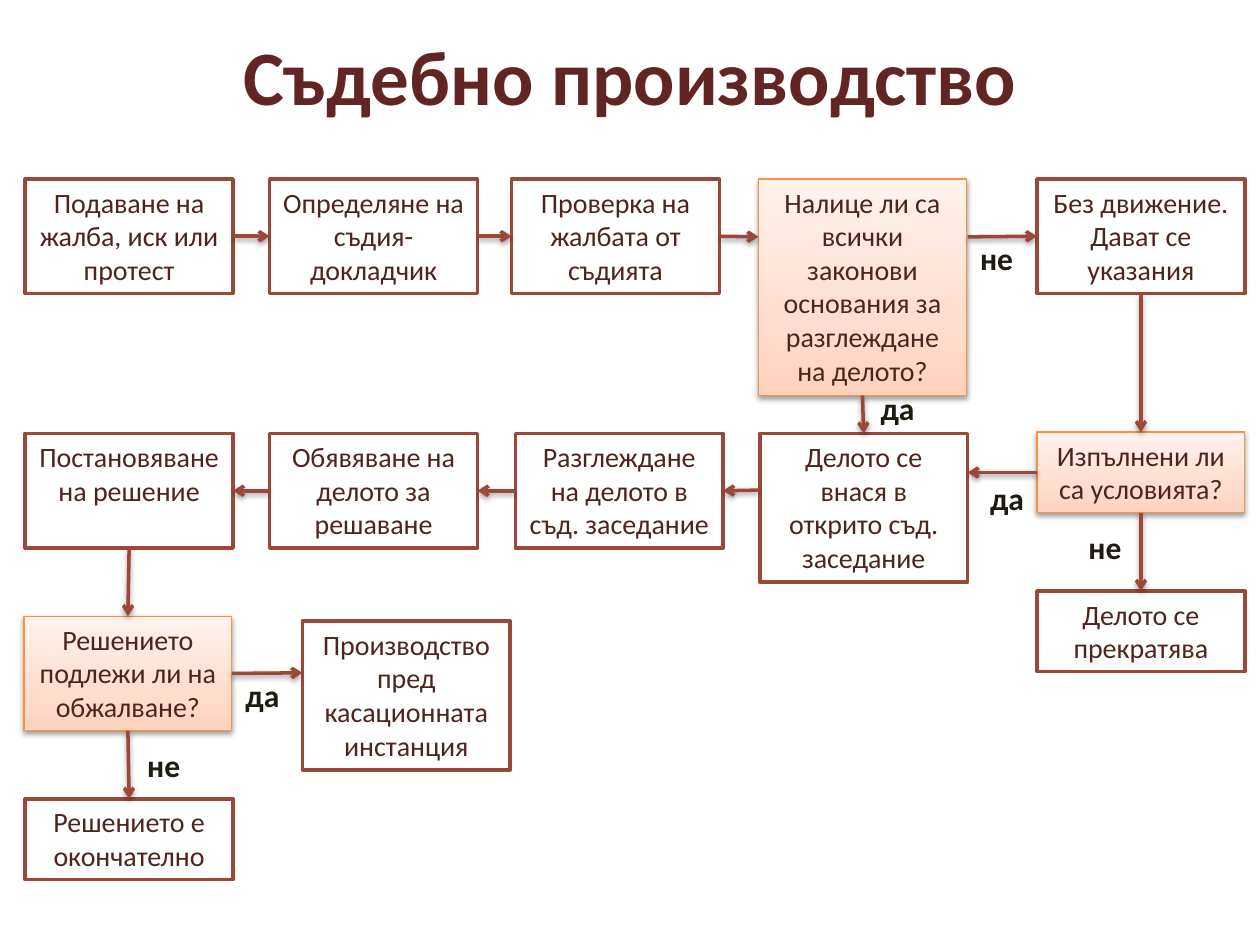
from copy import deepcopy
from pptx import Presentation
from pptx.dml.color import RGBColor
from pptx.enum.shapes import MSO_CONNECTOR, MSO_SHAPE
from pptx.enum.text import MSO_ANCHOR, MSO_AUTO_SIZE, PP_ALIGN
from pptx.oxml import parse_xml
from pptx.oxml.ns import nsdecls, qn
from pptx.util import Inches, Pt

SHADOW = (
    f'<a:effectLst {nsdecls("a")}>'
    '<a:outerShdw blurRad="40000" dist="20000" dir="5400000" rotWithShape="0">'
    '<a:srgbClr val="000000"><a:alpha val="38000"/></a:srgbClr>'
    '</a:outerShdw></a:effectLst>'
)
TOP, LEFT, BOTTOM, RIGHT = range(4)


def color(value):
    return RGBColor.from_string(value)


def write(paragraph, text, size, value, bold):
    run = paragraph.add_run()
    run.text = text
    run.font.name = "Calibri"
    run.font.size = Pt(size)
    run.font.bold = bold
    run.font.color.rgb = color(value)


prs = Presentation()
prs.slide_width, prs.slide_height = Inches(10), Inches(7.5)
slide = prs.slides.add_slide(prs.slide_layouts[5])

title = slide.shapes.title
title.left, title.top = Inches(0.5), Inches(-0.03)
title.width, title.height = Inches(9), Inches(1.25)
title.text_frame.vertical_anchor = MSO_ANCHOR.MIDDLE
heading = title.text_frame.paragraphs[0]
heading.alignment = PP_ALIGN.CENTER
write(heading, "Съдебно производство", 44, "632523", True)

row_1, row_2 = 1.42, 3.44
two_lines, three_lines, four_lines, six_lines = 0.64, 0.91, 1.18, 1.72
steps = [
    ("filing", 0.2, row_1, three_lines, "Подаване на жалба, иск или протест"),
    ("judge", 2.14, row_1, three_lines, "Определяне на съдия-докладчик"),
    ("check", 4.06, row_1, three_lines, "Проверка на жалбата от съдията"),
    ("grounds", 6.02, row_1, six_lines,
     "Налице ли са всички законови основания за разглеждане на делото?"),
    ("pending", 8.23, row_1, three_lines, "Без движение. Дават се указания"),
    ("conditions", 8.23, 3.43, two_lines, "Изпълнени ли са условията?"),
    ("terminated", 8.23, 4.69, two_lines, "Делото се прекратява"),
    ("open_session", 6.03, row_2, four_lines, "Делото се внася в открито съд. заседание"),
    ("hearing", 4.09, row_2, three_lines, "Разглеждане на делото в съд. заседание"),
    ("closing", 2.14, row_2, three_lines, "Обявяване на делото за решаване"),
    ("ruling", 0.2, row_2, three_lines, "Постановяване на решение"),
    ("appealable", 0.19, 4.89, three_lines, "Решението подлежи ли на обжалване?"),
    ("final", 0.2, 6.34, two_lines, "Решението е окончателно"),
    ("cassation", 2.4, 4.93, four_lines, "Производство пред касационната инстанция"),
]
questions = {"grounds", "conditions", "appealable"}
gradient = [(0, "FFD2BD"), (0.35, "FFDED0"), (1, "FFF2ED")]

boxes = {}
for step, left, top, height, text in steps:
    box = slide.shapes.add_shape(
        MSO_SHAPE.RECTANGLE, Inches(left), Inches(top), Inches(1.65), Inches(height))
    boxes[step] = box
    if step in questions:
        box.fill.gradient()
        box.fill.gradient_angle = 90
        stops = box._element.spPr.find(".//" + qn("a:gsLst"))
        stops.append(deepcopy(stops[0]))
        for stop, (position, value) in zip(box.fill.gradient_stops, gradient):
            stop.position = position
            stop.color.rgb = color(value)
        box.line.color.rgb = color("F69240")
        box.line.width = Pt(0.75)
        box._element.spPr.append(parse_xml(SHADOW))
    else:
        box.fill.solid()
        box.fill.fore_color.rgb = color("FFFFFF")
        box.line.color.rgb = color("9C4839")
        box.line.width = Pt(2)
        box.shadow.inherit = False
    frame = box.text_frame
    frame.word_wrap = True
    frame.auto_size = MSO_AUTO_SIZE.SHAPE_TO_FIT_TEXT
    frame.vertical_anchor = MSO_ANCHOR.TOP
    frame.paragraphs[0].alignment = PP_ALIGN.CENTER
    write(frame.paragraphs[0], text, 16, "4E241C", False)

arrows = [
    (("filing", RIGHT), ("judge", LEFT)),
    (("judge", RIGHT), ("check", LEFT)),
    (("check", RIGHT), (6.02, 1.88)),
    ((7.68, 1.88), ("pending", LEFT)),
    (("grounds", BOTTOM), ("open_session", TOP)),
    (("pending", BOTTOM), ("conditions", TOP)),
    (("conditions", BOTTOM), ("terminated", TOP)),
    (("conditions", LEFT), (7.68, 3.75)),
    (("hearing", LEFT), ("closing", RIGHT)),
    (("closing", LEFT), ("ruling", RIGHT)),
    (("ruling", BOTTOM), ("appealable", TOP)),
    (("appealable", RIGHT), (2.4, 5.34)),
    (("appealable", BOTTOM), ("final", TOP)),
    ((6.02, 3.89), ("hearing", RIGHT)),
]
for start, end in arrows:
    points = [(0, 0) if point[0] in boxes else point for point in (start, end)]
    arrow = slide.shapes.add_connector(
        MSO_CONNECTOR.STRAIGHT, *[Inches(value) for point in points for value in point])
    if start[0] in boxes:
        arrow.begin_connect(boxes[start[0]], start[1])
    if end[0] in boxes:
        arrow.end_connect(boxes[end[0]], end[1])
    arrow.line.color.rgb = color("9C4839")
    arrow.line.width = Pt(2)
    properties = arrow._element.spPr
    properties.find(qn("a:ln")).append(
        parse_xml(f'<a:tailEnd {nsdecls("a")} type="arrow"/>'))
    properties.append(parse_xml(SHADOW))

answers = [
    ("да", 6.89, 3.04),
    ("не", 1.07, 5.87),
    ("не", 8.54, 4.14),
    ("не", 7.68, 1.85),
    ("да", 7.76, 3.75),
    ("да", 1.85, 5.32),
]
for text, left, top in answers:
    answer = slide.shapes.add_textbox(
        Inches(left), Inches(top), Inches(0.47), Inches(0.4)).text_frame
    answer.word_wrap = False
    answer.auto_size = MSO_AUTO_SIZE.SHAPE_TO_FIT_TEXT
    write(answer.paragraphs[0], text, 18, "1E1C11", True)

prs.save("out.pptx")
